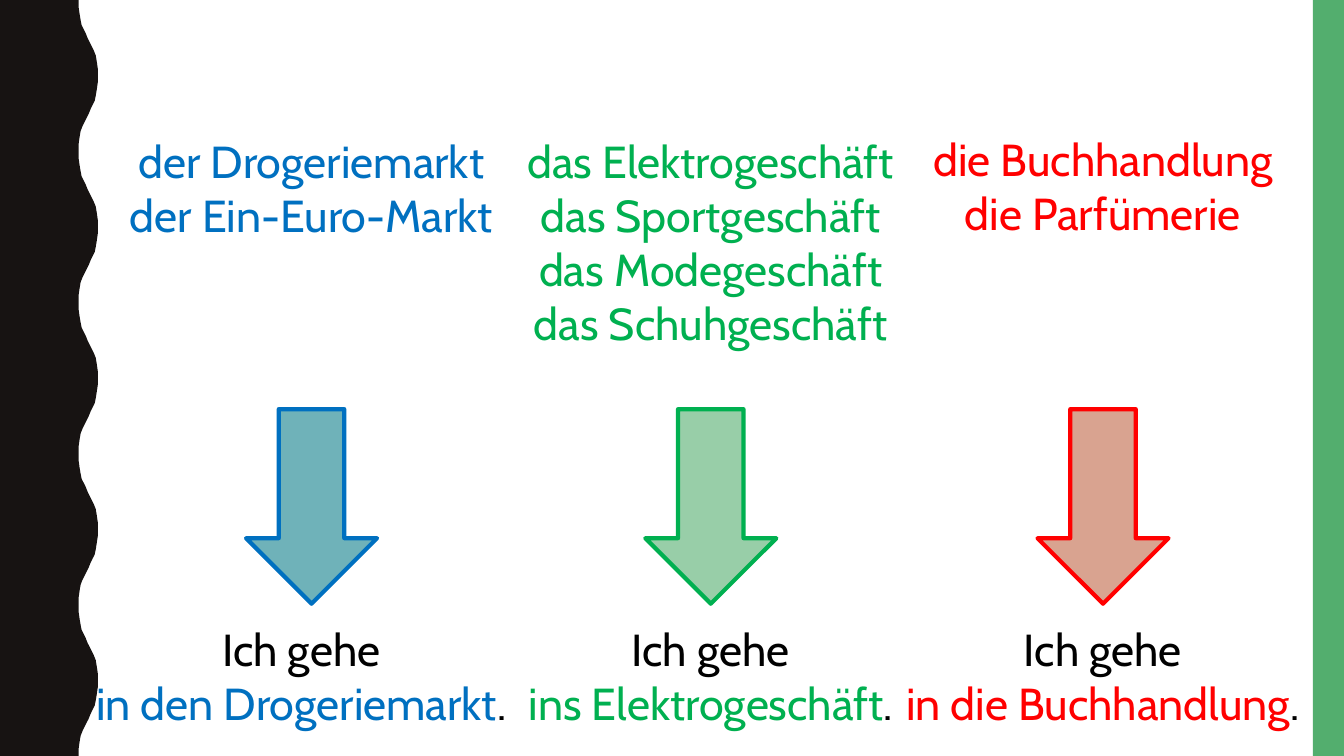
from pptx import Presentation
from pptx.dml.color import RGBColor
from pptx.enum.shapes import MSO_SHAPE
from pptx.enum.text import PP_ALIGN
from pptx.util import Inches, Pt

COLORS = {
    "wave": "171312", "stripe": "53AE6E", "text": "000000",
    "der": "0070C0", "das": "00B050", "die": "FF0000",
    "der_fill": "6FB2B9", "das_fill": "98CEA8", "die_fill": "D9A390",
}
# One swing of the wavy edge from its trough to its crest, as (x, y)
SWING = [(0.78, 0), (0.78, 0.07), (0.79, 0.14), (0.8, 0.2), (0.81, 0.25),
         (0.83, 0.29), (0.85, 0.33), (0.87, 0.38), (0.89, 0.42), (0.91, 0.46),
         (0.93, 0.5), (0.95, 0.55), (0.96, 0.61), (0.97, 0.68)]
TROUGH, CREST, SWING_HEIGHT, SWING_COUNT = 0.78, 0.97, 0.75, 10
BOX_WIDTH, ARROW_WIDTH = 4.36, 1.3

# article, nouns, prepositional phrase, nouns (left, top, height), answer (left, height), arrow left
COLUMNS = [
    ("der", ["der Drogeriemarkt", "der Ein-Euro-Markt"], "in den Drogeriemarkt",
     (0.91, 1.28, 1.18), (0.81, 1.18), 2.44),
    ("das", ["das Elektrogeschäft", "das Sportgeschäft", "das Modegeschäft",
             "das Schuhgeschäft"], "ins Elektrogeschäft",
     (4.87, 1.28, 2.26), (4.87, 1.72), 6.4),
    ("die", ["die Buchhandlung", "die Parfümerie"], "in die Buchhandlung",
     (8.76, 1.26, 1.18), (8.76, 1.72), 10.29),
]


class SlideBuilder:
    def __init__(self, slide, font="Cabin", size=32):
        self.slide, self.font, self.size = slide, font, size

    def paint(self, shape, fill, line=None):
        shape.shadow.inherit = False
        shape.fill.solid()
        shape.fill.fore_color.rgb = RGBColor.from_string(COLORS[fill])
        if line:
            shape.line.color.rgb = RGBColor.from_string(COLORS[line])
            shape.line.width = Pt(3)
        else:
            shape.line.fill.background()

    def shape(self, kind, left, top, width, height, fill, line=None):
        shape = self.slide.shapes.add_shape(
            kind, Inches(left), Inches(top), Inches(width), Inches(height))
        self.paint(shape, fill, line)

    def wavy_band(self):
        points = []
        for swing in range(SWING_COUNT):
            for x, y in SWING:
                edge = x if swing % 2 == 0 else TROUGH + CREST - x
                points.append((edge, swing * SWING_HEIGHT + y))
        bottom = SWING_COUNT * SWING_HEIGHT
        points += [(TROUGH, bottom), (0, bottom)]
        outline = self.slide.shapes.build_freeform(0, 0)
        outline.add_line_segments([(Inches(x), Inches(y)) for x, y in points])
        self.paint(outline.convert_to_shape(), "wave")

    def text(self, left, top, height, lines):
        """Add centred lines, each a list of (text, colour name) spans."""
        box = self.slide.shapes.add_textbox(
            Inches(left), Inches(top), Inches(BOX_WIDTH), Inches(height))
        frame = box.text_frame
        frame.word_wrap = True
        for index, spans in enumerate(lines):
            para = frame.add_paragraph() if index else frame.paragraphs[0]
            para.alignment = PP_ALIGN.CENTER
            for words, color in spans:
                span = para.add_run()
                span.text = words
                span.font.name = self.font
                span.font.size = Pt(self.size)
                span.font.color.rgb = RGBColor.from_string(COLORS[color])


def main():
    deck = Presentation()
    deck.slide_width, deck.slide_height = Inches(13.33), Inches(7.5)
    page = SlideBuilder(deck.slides.add_slide(deck.slide_layouts[6]))
    page.wavy_band()
    page.shape(MSO_SHAPE.RECTANGLE, 13.02, 0, 0.31, 7.5, "stripe")
    for article, nouns, phrase, nouns_place, answer_place, arrow_left in COLUMNS:
        page.text(*nouns_place, [[(noun, article)] for noun in nouns])
        page.shape(MSO_SHAPE.DOWN_ARROW, arrow_left, 4.06, ARROW_WIDTH, 1.93,
                   f"{article}_fill", article)
        answer_left, answer_height = answer_place
        page.text(answer_left, 6.12, answer_height,
                  [[("Ich gehe", "text")], [(phrase, article), (".", "text")]])
    deck.save("out.pptx")


if __name__ == "__main__":
    main()
